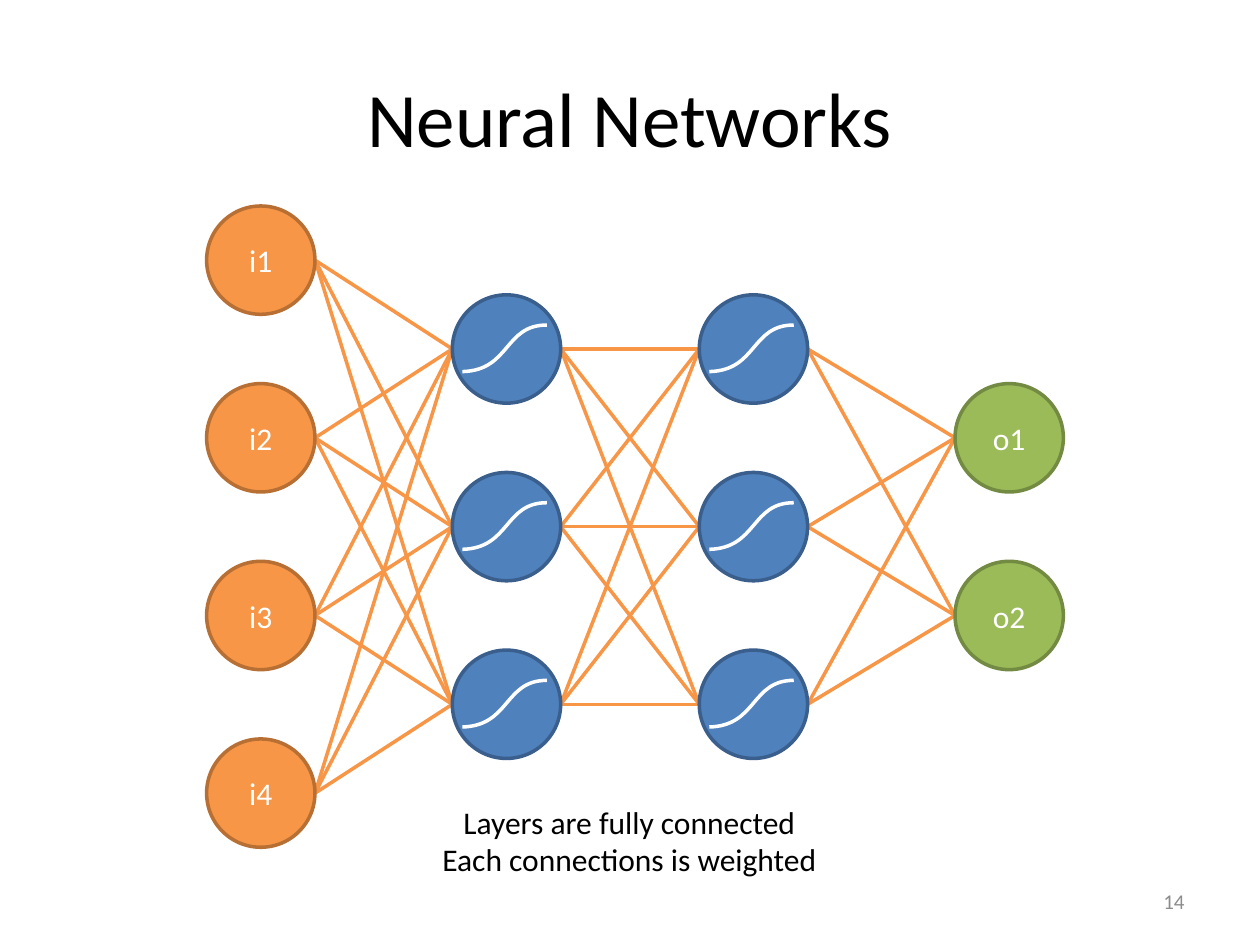
from dataclasses import dataclass
from itertools import pairwise, product

from lxml import etree
from pptx import Presentation
from pptx.dml.color import RGBColor
from pptx.enum.shapes import MSO_CONNECTOR, MSO_SHAPE
from pptx.enum.text import MSO_ANCHOR, PP_ALIGN
from pptx.oxml.ns import qn
from pptx.util import Inches, Pt

LINE = MSO_CONNECTOR.STRAIGHT
OVAL = MSO_SHAPE.OVAL
MIDDLE, TOP = MSO_ANCHOR.MIDDLE, MSO_ANCHOR.TOP
CENTER, RIGHT = PP_ALIGN.CENTER, PP_ALIGN.RIGHT


@dataclass(frozen=True)
class Theme:
    font: str = "Calibri"
    black: str = "000000"
    white: str = "FFFFFF"
    gray: str = "8C8C8C"
    link: str = "F79646"
    title: int = 44
    body: int = 18
    small: int = 12
    stroke: int = 2


@dataclass(frozen=True)
class Layer:
    left: float
    fill: str
    edge: str
    names: tuple[str, ...]  # an empty name marks a sigmoid node

    def nodes(self) -> list[tuple[float, float, str]]:
        """Give the centre and name of each node, spread about the mid line."""
        first = MID - PITCH * (len(self.names) - 1) / 2
        return [(self.left + SIZE / 2, first + i * PITCH, name)
                for i, name in enumerate(self.names)]


THEME = Theme()
SIZE, PITCH, MID = 0.86, 1.41, 4.18
HIDDEN = ("4F81BD", "3A5F8C", ("",) * 3)
LAYERS = (
    Layer(1.64, "F79646", "B76F34", ("i1", "i2", "i3", "i4")),
    Layer(3.59, *HIDDEN),
    Layer(5.55, *HIDDEN),
    Layer(7.58, "9BBB59", "738A42", ("o1", "o2")),
)
# Bezier points of the sigmoid, relative to the node centre
CURVE = ((-0.35, 0.18), (0.03, 0.17), (-0.02, -0.19), (0.32, -0.19))


def paint(line, color: str) -> None:
    line.color.rgb = RGBColor.from_string(color)
    line.width = Pt(THEME.stroke)


def write(frame, lines: tuple[str, ...], size: int, color: str,
          align=CENTER, anchor=MIDDLE) -> None:
    frame.vertical_anchor = anchor
    for i, text in enumerate(lines):
        para = frame.add_paragraph() if i else frame.paragraphs[0]
        para.alignment = align
        run = para.add_run()
        run.text = text
        run.font.name = THEME.font
        run.font.size = Pt(size)
        run.font.color.rgb = RGBColor.from_string(color)


def place(shape, left: float, top: float, width: float, height: float) -> None:
    shape.left, shape.top = Inches(left), Inches(top)
    shape.width, shape.height = Inches(width), Inches(height)


def add_link(shapes, x1: float, y1: float, x2: float, y2: float) -> None:
    link = shapes.add_connector(LINE, *map(Inches, (x1, y1, x2, y2)))
    paint(link.line, THEME.link)
    etree.SubElement(link._element.spPr, qn("a:effectLst"))


def add_curve(shapes, x: float, y: float) -> None:
    """Draw the sigmoid as a line from end to end, bent into one Bezier."""
    points = [(Inches(x + dx), Inches(y + dy)) for dx, dy in CURVE]
    form = shapes.build_freeform(*points[0])
    form.add_line_segments(points[-1:], close=False)
    curve = form.convert_to_shape()
    curve.shadow.inherit = False
    curve.fill.background()
    paint(curve.line, THEME.white)

    step = next(curve._element.iter(qn("a:lnTo")))
    bend = etree.Element(qn("a:cubicBezTo"))
    for px, py in points[1:]:
        etree.SubElement(bend, qn("a:pt"), x=str(px - curve.left),
                         y=str(py - curve.top))
    step.getparent().replace(step, bend)


def add_node(shapes, layer: Layer, x: float, y: float, name: str) -> None:
    box = (x - SIZE / 2, y - SIZE / 2, SIZE, SIZE)
    node = shapes.add_shape(OVAL, *map(Inches, box))
    node.shadow.inherit = False
    node.fill.solid()
    node.fill.fore_color.rgb = RGBColor.from_string(layer.fill)
    paint(node.line, layer.edge)
    if name:
        write(node.text_frame, (name,), THEME.body, THEME.white)
    else:
        add_curve(shapes, x, y)


def main() -> None:
    deck = Presentation()
    deck.slide_width, deck.slide_height = Inches(10), Inches(7.5)
    slide = deck.slides.add_slide(deck.slide_layouts.get_by_name("Title Only"))
    shapes = slide.shapes

    place(shapes.title, 0.5, 0.3, 9, 1.25)
    write(shapes.title.text_frame, ("Neural Networks",), THEME.title, THEME.black)

    for near, far in pairwise(LAYERS):
        for (x1, y1, _), (x2, y2, _) in product(near.nodes(), far.nodes()):
            add_link(shapes, x1 + SIZE / 2, y1, x2 - SIZE / 2, y2)
    for layer in LAYERS:
        for x, y, name in layer.nodes():
            add_node(shapes, layer, x, y, name)

    note = shapes.add_textbox(*map(Inches, (3.39, 6.32, 3.21, 0.71)))
    note.text_frame.word_wrap = False
    write(note.text_frame,
          ("Layers are fully connected", "Each connections is weighted"),
          THEME.body, THEME.black, anchor=TOP)

    page = shapes.add_textbox(*map(Inches, (7.17, 6.95, 2.33, 0.4)))
    page.text_frame.word_wrap = True
    write(page.text_frame, ("14",), THEME.small, THEME.gray, align=RIGHT)

    deck.save("out.pptx")


if __name__ == "__main__":
    main()
